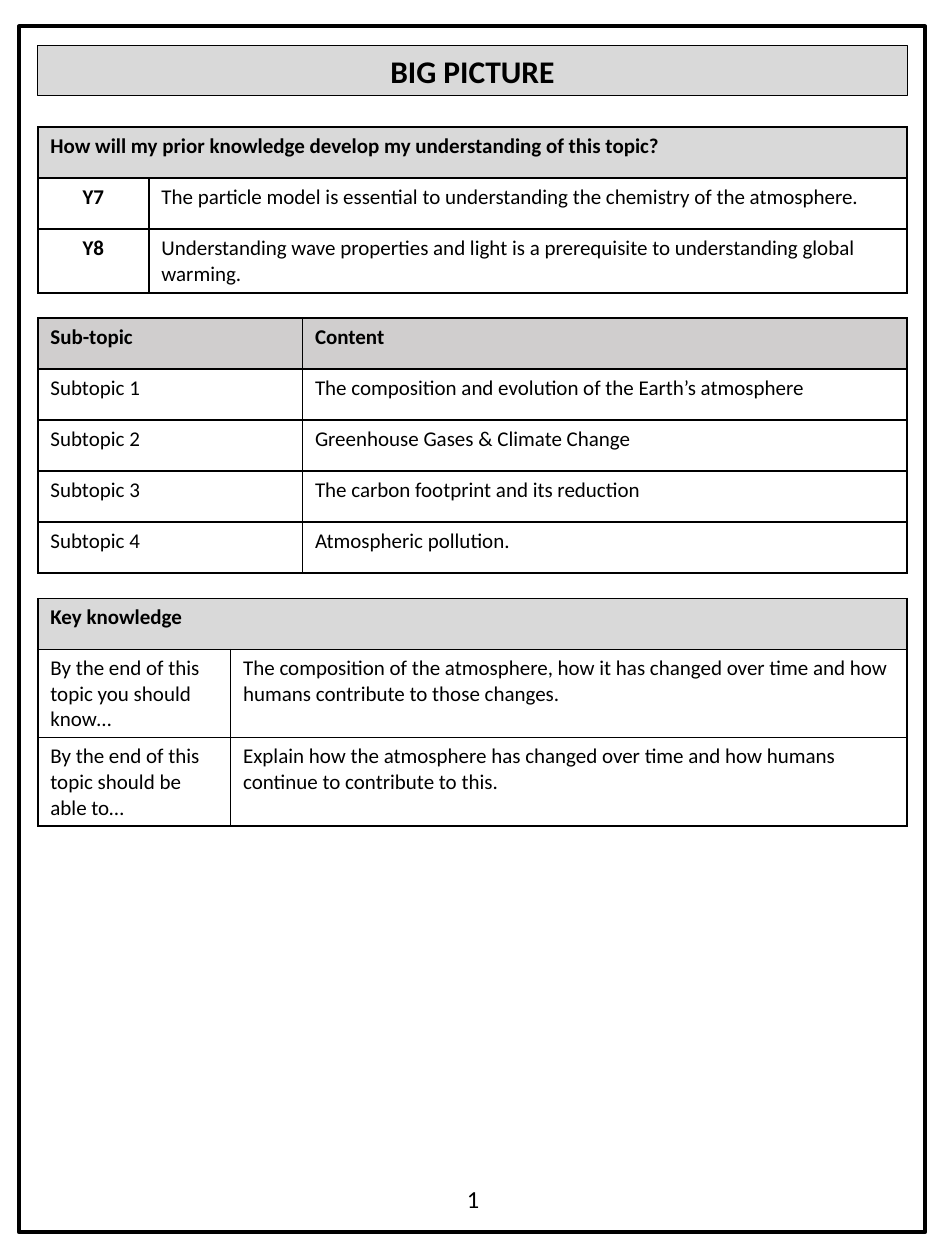
from lxml import etree
from pptx import Presentation
from pptx.dml.color import RGBColor
from pptx.enum.shapes import MSO_SHAPE
from pptx.enum.text import MSO_ANCHOR, MSO_AUTO_SIZE, PP_ALIGN
from pptx.oxml.ns import qn
from pptx.util import Inches, Pt

LEFT, CENTER = PP_ALIGN.LEFT, PP_ALIGN.CENTER
MIDDLE = MSO_ANCHOR.MIDDLE
NO_AUTOFIT = MSO_AUTO_SIZE.NONE
RECTANGLE = MSO_SHAPE.RECTANGLE
TITLE_ONLY = 5

COLORS = {"ink": "000000", "paper": "FFFFFF", "band": "D9D9D9", "header": "D0CECE"}
MARGIN, CONTENT = 4, 92  # percent of the page width
ROW, TWO_LINES, THREE_LINES = 4.05, 5, 7  # percent of the page height


def color(name):
    return RGBColor.from_string(COLORS[name])


def write(frame, text, size=12, bold=False, align=LEFT, font="Calibri"):
    frame.word_wrap = True
    para = frame.paragraphs[0]
    para.alignment = align
    span = para.add_run()
    span.text = text
    span.font.name, span.font.size, span.font.bold = font, Pt(size), bold
    span.font.color.rgb = color("ink")


def add_borders(cell, points=1):
    properties = cell._tc.get_or_add_tcPr()
    for index, side in enumerate(("lnL", "lnR", "lnT", "lnB")):
        line = etree.Element(qn(f"a:{side}"), w=str(Pt(points)))
        fill = etree.SubElement(line, qn("a:solidFill"))
        etree.SubElement(fill, qn("a:srgbClr"), val=COLORS["ink"])
        properties.insert(index, line)


class Sheet:
    """A page whose places and sizes are given in percent of its width and height."""

    def __init__(self, deck):
        self.deck = deck
        self.page = deck.slides.add_slide(deck.slide_layouts[TITLE_ONLY])

    def across(self, percent):
        return round(self.deck.slide_width * percent / 100)

    def down(self, percent):
        return round(self.deck.slide_height * percent / 100)

    def area(self, left, top, width, height):
        return self.across(left), self.down(top), self.across(width), self.down(height)

    def frame(self, *place):
        box = self.page.shapes.add_shape(RECTANGLE, *self.area(*place))
        box.shadow.inherit = False
        box.fill.background()
        box.line.color.rgb = color("ink")
        box.line.width = Pt(2.25)

    def title(self, text, *place):
        box = self.page.shapes.title
        box.left, box.top, box.width, box.height = self.area(*place)
        box.fill.solid()
        box.fill.fore_color.rgb = color("band")
        box.line.color.rgb = color("ink")
        box.line.width = Pt(0.75)
        box.text_frame.auto_size = NO_AUTOFIT
        box.text_frame.vertical_anchor = MIDDLE
        write(box.text_frame, text, size=18, bold=True, align=CENTER)

    def text(self, text, *place, **style):
        box = self.page.shapes.add_textbox(*self.area(*place))
        write(box.text_frame, text, **style)

    def table(self, top, first_column, heights, rows, header="band", labels=False):
        """Two columns under a header row; a header of one text spans both."""
        place = self.area(MARGIN, top, CONTENT, sum(heights))
        table = self.page.shapes.add_table(len(rows), 2, *place).table
        table.first_row = table.horz_banding = False
        for column, width in zip(table.columns, (first_column, CONTENT - first_column)):
            column.width = self.across(width)
        for row, height in zip(table.rows, heights):
            row.height = self.down(height)
        for cell in table.iter_cells():
            add_borders(cell)
            cell.fill.solid()
            cell.fill.fore_color.rgb = color("paper")
        for number, texts in enumerate(rows):
            if len(texts) == 1:
                table.cell(number, 0).merge(table.cell(number, 1))
            for place, text in enumerate(texts):
                cell = table.cell(number, place)
                label = labels and number > 0 and place == 0
                if number == 0:
                    cell.fill.fore_color.rgb = color(header)
                write(cell.text_frame, text, bold=number == 0 or label,
                      align=CENTER if label else LEFT)


def main():
    deck = Presentation()
    deck.slide_width, deck.slide_height = Inches(7.5), Inches(10)
    sheet = Sheet(deck)
    sheet.frame(2, 2.1, 95.9, 95.7)
    sheet.title("BIG PICTURE", MARGIN, 3.6, CONTENT, 4)
    sheet.table(10.1, 11.75, [ROW, ROW, TWO_LINES], [
        ["How will my prior knowledge develop my understanding of this topic?"],
        ["Y7", "The particle model is essential to understanding the chemistry "
               "of the atmosphere."],
        ["Y8", "Understanding wave properties and light is a prerequisite to "
               "understanding global warming."],
    ], labels=True)
    sheet.text("1", 48.1, 93.5, 7, 3.4, size=14)
    contents = ["The composition and evolution of the Earth’s atmosphere",
                "Greenhouse Gases & Climate Change",
                "The carbon footprint and its reduction",
                "Atmospheric pollution."]
    subtopics = [[f"Subtopic {number}", content]
                 for number, content in enumerate(contents, 1)]
    sheet.table(25.25, 28, [ROW] * 5, [["Sub-topic", "Content"]] + subtopics,
                header="header")
    sheet.table(47.5, 20.4, [ROW, THREE_LINES, THREE_LINES], [
        ["Key knowledge"],
        ["By the end of this topic you should know…",
         "The composition of the atmosphere, how it has changed over time and how "
         "humans contribute to those changes."],
        ["By the end of this topic should be able to…",
         "Explain how the atmosphere has changed over time and how humans "
         "continue to contribute to this."],
    ])
    deck.save("out.pptx")


if __name__ == "__main__":
    main()
